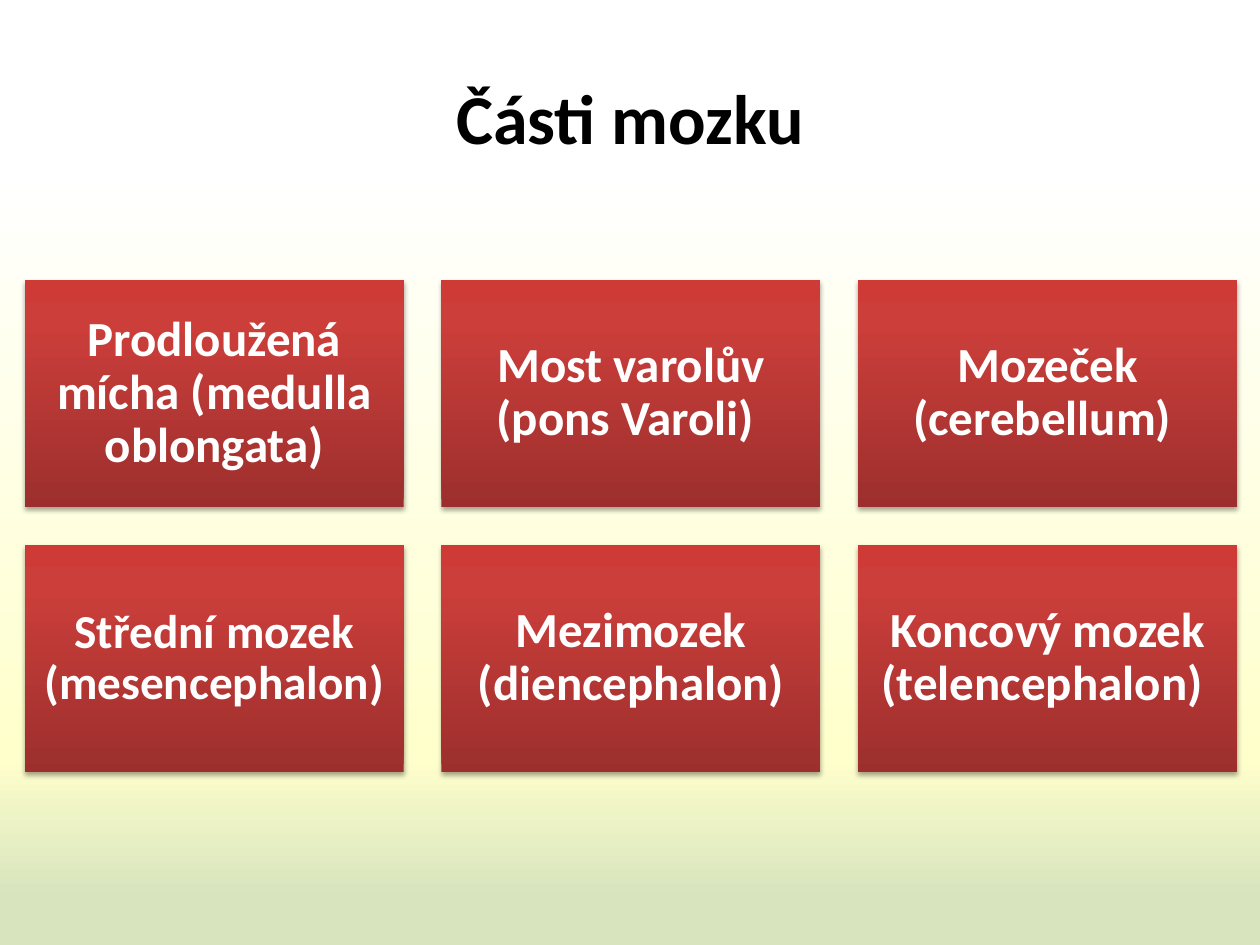
from lxml.etree import SubElement
from pptx import Presentation
from pptx.dml.color import RGBColor
from pptx.enum.shapes import MSO_SHAPE as Shape
from pptx.enum.text import MSO_ANCHOR as Anchor, PP_ALIGN as Align
from pptx.oxml.ns import qn
from pptx.util import Cm, Pt


def colour(hex_string):
    return RGBColor.from_string(hex_string)


class BrainSlide:
    FONT = "Calibri"
    BACKGROUND = [(17, "FFFFFF"), (80, "FFFFCC"), (95, "D7E4BD")]
    BOX_FILL = [(0, "9C2F2D"), (80, "CB3E3A"), (100, "CE3B37")]

    def __init__(self, presentation):
        self.slide = presentation.slides.add_slide(presentation.slide_layouts[6])

    def gradient(self, fill, element, stops, angle):
        fill.gradient()
        fill.gradient_angle = angle
        stop_list = element.xpath(".//a:gradFill/a:gsLst")[0]
        for old_stop in list(stop_list):
            stop_list.remove(old_stop)
        for position, hex_string in stops:
            stop = SubElement(stop_list, qn("a:gs"), pos=str(position * 1000))
            SubElement(stop, qn("a:srgbClr"), val=hex_string)

    def shadow(self, shape):
        shape.shadow.inherit = False
        effects = shape._element.spPr.find(qn("a:effectLst"))
        outer = SubElement(effects, qn("a:outerShdw"), blurRad=str(Pt(3.1)),
                           dist=str(Pt(1.8)), dir="5400000", rotWithShape="0")
        black = SubElement(outer, qn("a:srgbClr"), val="000000")
        SubElement(black, qn("a:alpha"), val="35000")

    def label(self, shape, text, size, hex_string):
        frame = shape.text_frame
        frame.text = text
        frame.word_wrap = True
        frame.vertical_anchor = Anchor.MIDDLE
        paragraph = frame.paragraphs[0]
        paragraph.alignment = Align.CENTER
        font = paragraph.runs[0].font
        font.name, font.size, font.bold = self.FONT, Pt(size), True
        font.color.rgb = colour(hex_string)
        return frame

    def background(self):
        self.gradient(self.slide.background.fill, self.slide._element,
                      self.BACKGROUND, 270)

    def title(self, text, left, top, width, height):
        box = self.slide.shapes.add_textbox(Cm(left), Cm(top), Cm(width), Cm(height))
        self.label(box, text, 40, "000000")

    def box(self, text, size, left, top, width, height):
        shape = self.slide.shapes.add_shape(
            Shape.RECTANGLE, Cm(left), Cm(top), Cm(width), Cm(height))
        self.gradient(shape.fill, shape._element, self.BOX_FILL, 90)
        shape.line.fill.background()
        self.shadow(shape)
        frame = self.label(shape, text, size, "FFFFFF")
        frame.paragraphs[0].line_spacing = 0.9
        margin = Pt(size * 0.3)
        frame.margin_left = frame.margin_right = margin
        frame.margin_top = frame.margin_bottom = margin


def main():
    presentation = Presentation()
    presentation.slide_width, presentation.slide_height = Cm(25.4), Cm(19.05)
    brain = BrainSlide(presentation)

    # Background and title
    brain.background()
    brain.title("Části mozku", 1.27, 0.76, 22.86, 3.18)

    # Grid of brain parts, three to a row
    parts = [
        ("Prodloužená mícha (medulla oblongata)", 28),
        ("Most varolův (pons Varoli) ", 28),
        ("Mozeček (cerebellum) ", 28),
        ("Střední mozek (mesencephalon)", 27),
        ("Mezimozek (diencephalon)", 28),
        ("Koncový mozek (telencephalon) ", 28),
    ]
    left, top, width, height, gap = 0.5, 5.64, 7.64, 4.58, 0.76
    for index, (text, size) in enumerate(parts):
        row, column = divmod(index, 3)
        brain.box(text, size, left + column * (width + gap),
                  top + row * (height + gap), width, height)

    presentation.save("out.pptx")


if __name__ == "__main__":
    main()
